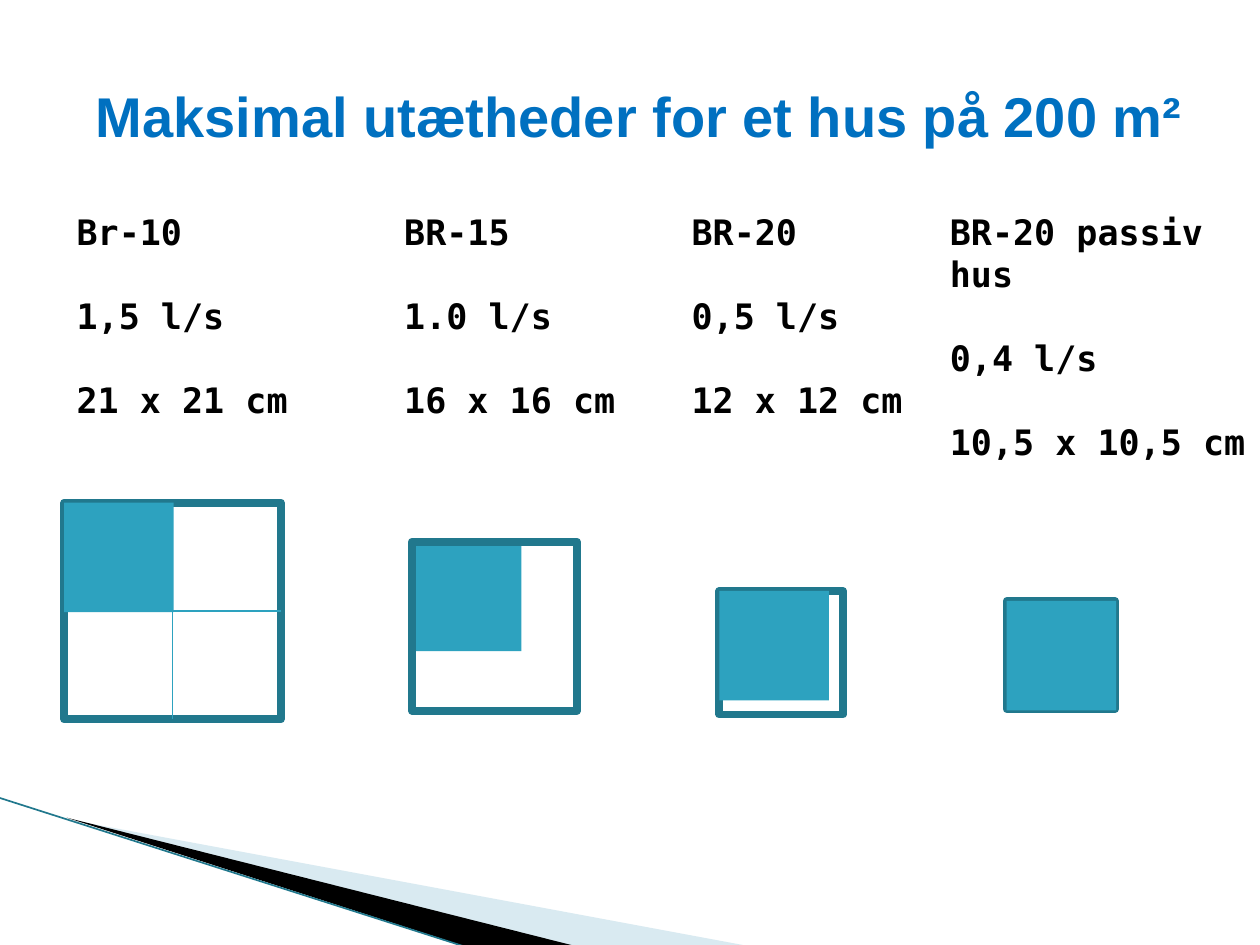
"""Build a slide comparing the maximum air leakage of a 200 m² house."""
from lxml.etree import SubElement
from pptx import Presentation
from pptx.dml.color import RGBColor
from pptx.enum.shapes import MSO_CONNECTOR as MC, MSO_SHAPE as MS
from pptx.enum.text import PP_ALIGN as PA
from pptx.oxml.ns import qn
from pptx.util import Pt

BLUE, TEAL, DARK = "0070C0", "2DA2BF", "21788D"
UNIT = 62.6


def rgb(h):
    return RGBColor.from_string(h)


def add_line(x1, y1, x2, y2, color, width):
    c = s.shapes.add_connector(MC.STRAIGHT, Pt(x1), Pt(y1), Pt(x2), Pt(y2))
    c.line.color.rgb = rgb(color)
    c.line.width = Pt(width)
    SubElement(c._element.spPr, qn("a:effectLst"))


prs = Presentation()
prs.slide_width, prs.slide_height = Pt(720), Pt(540)
s = prs.slides.add_slide(prs.slide_layouts[6])

wedges = [
    ("A0CBDC", 40, [(39.6, 468.4), (428.4, 540.7), (328.3, 540.7)]),
    ("000000", 100, [(38.2, 467.3), (329, 540.7), (267.8, 541.4)]),
]
for color, opacity, points in wedges:
    pts = [(Pt(x), Pt(y)) for x, y in points]
    fb = s.shapes.build_freeform(*pts[0], scale=1.0)
    fb.add_line_segments(pts[1:], close=True)
    sp = fb.convert_to_shape()
    sp.shadow.inherit = False
    sp.fill.solid()
    sp.fill.fore_color.rgb = rgb(color)
    sp.line.fill.background()
    if opacity < 100:
        clr = sp._element.spPr.find(".//" + qn("a:srgbClr"))
        SubElement(clr, qn("a:alpha"), val=str(opacity * 1000))
add_line(-0.7, 455.8, 267.1, 541.4, DARK, 0.95)

squares = [
    (36.7, 287.3, 123.8, 123.8, True),
    (235.4, 309.6, 94.3, 96.5, False),
    (411.1, 337.7, 70.6, 70.6, True),
    (575.3, 343.4, 61.9, 61.9, True),
]
for i, (x, y, w, h, fill_on_top) in enumerate(squares):
    parts = [(w, h, False), (UNIT, UNIT, True)]
    for pw, ph, filled in parts if fill_on_top else parts[::-1]:
        sp = s.shapes.add_shape(MS.RECTANGLE, Pt(x), Pt(y), Pt(pw), Pt(ph))
        sp.shadow.inherit = False
        if filled:
            sp.fill.solid()
            sp.fill.fore_color.rgb = rgb(TEAL)
            sp.line.fill.background()
        else:
            sp.fill.background()
            sp.line.color.rgb = rgb(DARK)
            sp.line.width = Pt(4.5)
        if i == 0 and not filled:
            add_line(x + w / 2, y, x + w / 2, y + h, TEAL, 0.75)
            add_line(x, y + h / 2, x + w, y + h / 2, TEAL, 0.75)

texts = [
    (25.2, 43.2, 680.4, 46, ["Maksimal utætheder for et hus på 200 m²"], "Arial", 32, BLUE),
]
columns = [
    (36.7, 158.4, ["Br-10", "1,5 l/s", "21 x 21 cm"]),
    (223.9, 141.8, ["BR-15", "1.0 l/s", "16 x 16 cm"]),
    (388.1, 147.6, ["BR-20", "0,5 l/s", "12 x 12 cm"]),
    (535.7, 184.3, ["BR-20 passiv hus", "0,4 l/s", "10,5 x 10,5 cm"]),
]
for x, w, lines in columns:
    texts.append((x, 116.6, w, 128.2, lines, "DejaVu Sans Mono", 20, "000000"))

for x, y, w, h, lines, font, size, color in texts:
    tf = s.shapes.add_textbox(Pt(x), Pt(y), Pt(w), Pt(h)).text_frame
    tf.word_wrap = True
    for i, line in enumerate(lines):
        p = tf.add_paragraph() if i else tf.paragraphs[0]
        p.text = line
        if len(lines) == 1:
            p.alignment = PA.CENTER
        else:
            p.line_spacing = Pt(24)
        if i:
            p.space_before = Pt(24)
        p.font.name, p.font.size, p.font.bold = font, Pt(size), True
        p.font.color.rgb = rgb(color)

prs.save("out.pptx")
